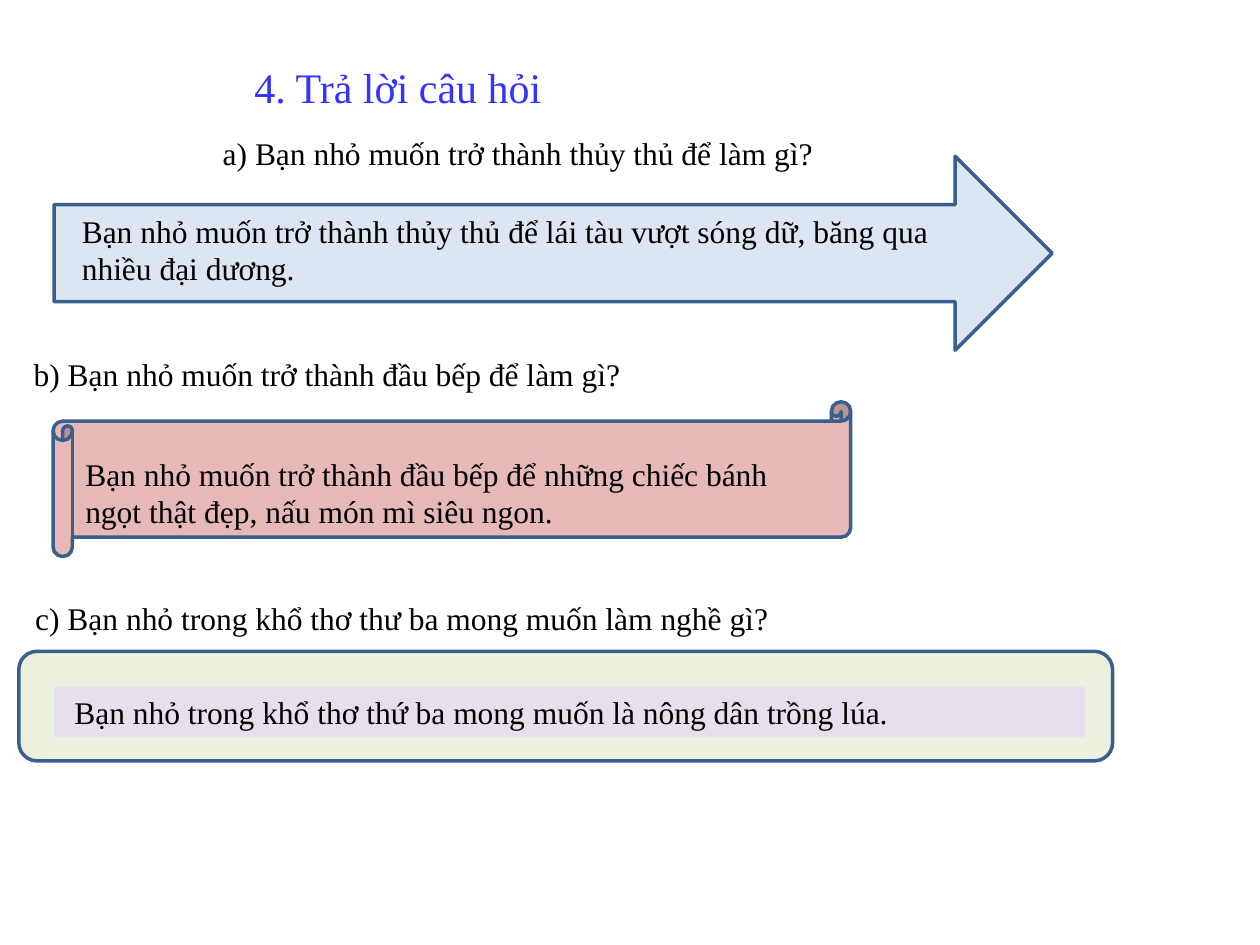
"""Build a reading-comprehension slide with three questions and framed answers."""
from dataclasses import dataclass
from typing import Optional

from pptx import Presentation
from pptx.dml.color import RGBColor
from pptx.enum.shapes import MSO_SHAPE
from pptx.enum.text import MSO_ANCHOR, PP_ALIGN
from pptx.util import Cm, Pt

FONT = "Times New Roman"
BLACK, BLUE, OUTLINE = "000000", "3333FF", "3A5F8C"


@dataclass(frozen=True)
class Area:
    left: float
    top: float
    width: float
    height: float

    def lengths(self) -> tuple:
        return Cm(self.left), Cm(self.top), Cm(self.width), Cm(self.height)


@dataclass(frozen=True)
class Exercise:
    question: str
    question_area: Area
    frame: MSO_SHAPE
    frame_area: Area
    frame_fill: str
    answer: str
    answer_area: Area
    answer_fill: Optional[str] = None
    answer_inset: float = 0.25


EXERCISES = [
    Exercise(
        "a) Bạn nhỏ muốn trở thành thủy thủ để làm gì?",
        Area(4.24, 2.57, 15.04, 1.02),
        MSO_SHAPE.RIGHT_ARROW, Area(1.09, 3.15, 20.12, 3.91), "DCE6F2",
        "Bạn nhỏ muốn trở thành thủy thủ để lái tàu vượt sóng dữ, băng qua nhiều đại dương.",
        Area(1.4, 4.14, 18.42, 2.57),
    ),
    Exercise(
        "b) Bạn nhỏ muốn trở thành đầu bếp để làm gì?",
        Area(0.43, 7.04, 15.04, 1.02),
        MSO_SHAPE.HORIZONTAL_SCROLL, Area(1.07, 8.1, 16.08, 3.12), "E6B9B8",
        "Bạn nhỏ muốn trở thành đầu bếp để những chiếc bánh ngọt thật đẹp, nấu món mì siêu ngon.",
        Area(1.47, 9.04, 15.04, 1.8),
    ),
    Exercise(
        "c) Bạn nhỏ trong khổ thơ thư ba mong muốn làm nghề gì?",
        Area(0.46, 11.96, 20.78, 1.02),
        MSO_SHAPE.ROUNDED_RECTANGLE, Area(0.38, 13.13, 22.05, 2.21), "EBF1DE",
        "Bạn nhỏ trong khổ thơ thứ ba mong muốn là nông dân trồng lúa.",
        Area(1.09, 13.84, 20.78, 1.02), "E6E0EC", 0.41,
    ),
]


def paint(color_format, color: str) -> None:
    color_format.rgb = RGBColor.from_string(color)


def fill_solid(shape, color: str) -> None:
    shape.fill.solid()
    paint(shape.fill.fore_color, color)


def write(box, text: str, *, size: float = 18, color: str = BLACK, inset: float = 0.25) -> None:
    frame = box.text_frame
    frame.word_wrap = True
    frame.vertical_anchor = MSO_ANCHOR.TOP
    frame.margin_left = Cm(inset)
    para = frame.paragraphs[0]
    para.alignment = PP_ALIGN.LEFT
    span = para.add_run()
    span.text = text
    span.font.name = FONT
    span.font.size = Pt(size)
    paint(span.font.color, color)


def draw_title(page, text: str, area: Area) -> None:
    title = page.shapes.title
    title.left, title.top, title.width, title.height = area.lengths()
    write(title, text, size=24, color=BLUE)


def draw_exercise(page, exercise: Exercise) -> None:
    question = page.shapes.add_textbox(*exercise.question_area.lengths())
    write(question, exercise.question)

    group = page.shapes.add_group_shape()
    frame = group.shapes.add_shape(exercise.frame, *exercise.frame_area.lengths())
    frame.shadow.inherit = False
    fill_solid(frame, exercise.frame_fill)
    paint(frame.line.color, OUTLINE)
    frame.line.width = Pt(2)

    answer = group.shapes.add_textbox(*exercise.answer_area.lengths())
    if exercise.answer_fill:
        fill_solid(answer, exercise.answer_fill)
    write(answer, exercise.answer, inset=exercise.answer_inset)


def main() -> None:
    deck = Presentation()
    deck.slide_width, deck.slide_height = Cm(25.4), Cm(19.05)
    page = deck.slides.add_slide(deck.slide_layouts.get_by_name("Title Only"))
    draw_title(page, "4. Trả lời câu hỏi", Area(4.88, 1.12, 9.73, 1.27))
    for exercise in EXERCISES:
        draw_exercise(page, exercise)
    deck.save("out.pptx")


if __name__ == "__main__":
    main()
